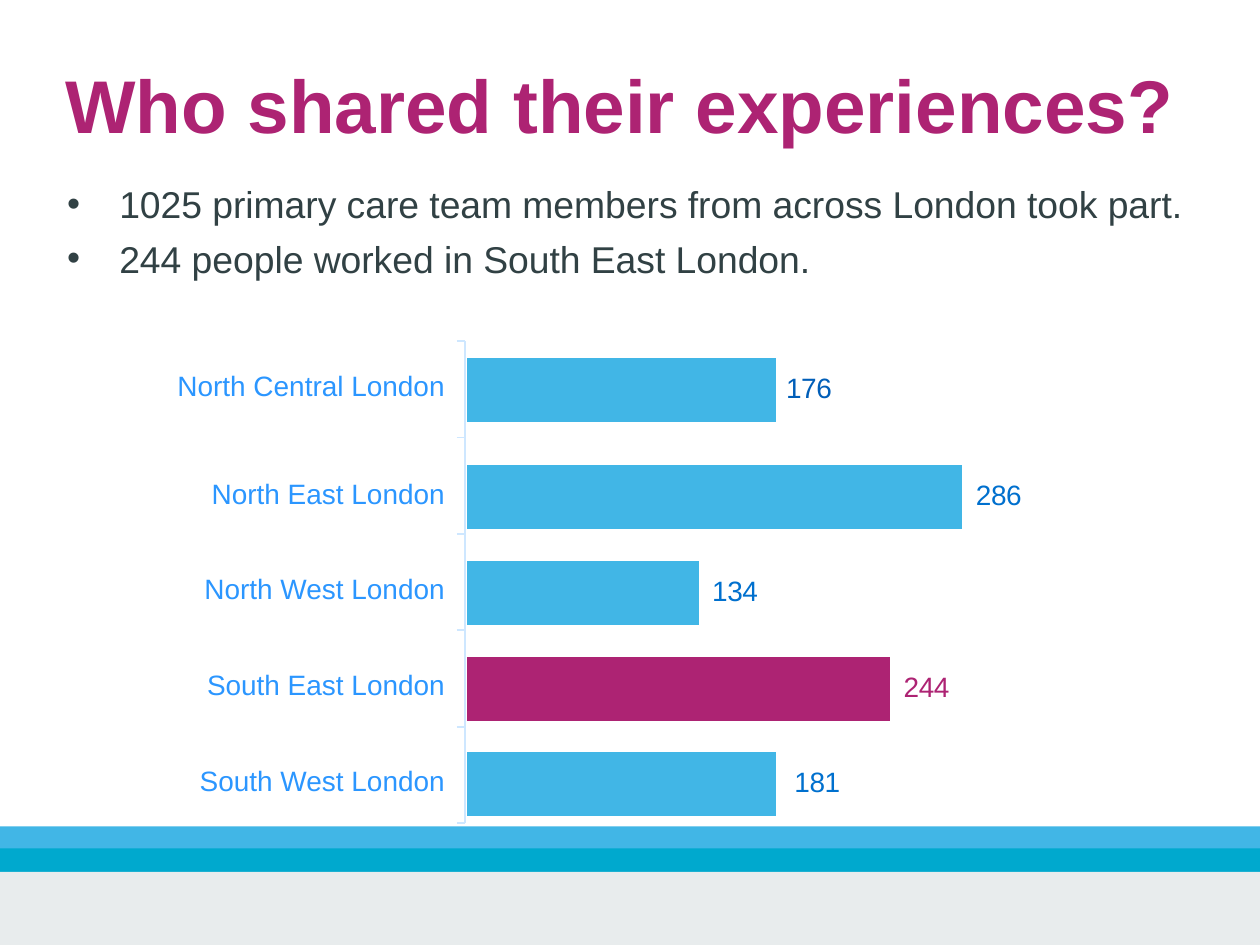
"""Builds the slide on which London areas shared their experiences."""
import dataclasses

import lxml.etree
import pptx
import pptx.dml.color
import pptx.enum.shapes
import pptx.enum.text
import pptx.oxml.ns
import pptx.util

Inches = pptx.util.Inches
Align = pptx.enum.text.PP_ALIGN
qn = pptx.oxml.ns.qn


@dataclasses.dataclass(frozen=True)
class Theme:
    font: str = "Arial"
    title_size: float = 32
    body_size: float = 16
    table_size: float = 12
    spacer_size: float = 6
    axis_width: float = 0.75
    plum: str = "AD2373"
    ink: str = "314144"
    sky: str = "41B6E6"
    teal: str = "00A9CE"
    mist: str = "E8ECED"
    label: str = "2B96FF"
    value: str = "0070CE"
    first_value: str = "005EB8"
    axis: str = "CEE7FF"
    plain_table: str = "{2D5ABB26-0587-4C30-8999-92F81FD0307C}"


class SlideBuilder:
    def __init__(self, slide, theme):
        self.slide = slide
        self.theme = theme

    def color(self, value):
        return pptx.dml.color.RGBColor.from_string(value)

    def style(self, para, size, color, bold=False):
        for run in para.runs:
            run.font.name = self.theme.font
            run.font.size = pptx.util.Pt(size)
            run.font.bold = bold
            run.font.color.rgb = self.color(color)

    def placeholder(self, holder, area, top_inset):
        holder.left, holder.top, holder.width, holder.height = map(Inches, area)
        frame = holder.text_frame
        frame.margin_left = frame.margin_right = frame.margin_bottom = 0
        frame.margin_top = Inches(top_inset)
        frame.vertical_anchor = pptx.enum.text.MSO_ANCHOR.TOP
        frame.auto_size = pptx.enum.text.MSO_AUTO_SIZE.NONE
        frame.word_wrap = True
        return frame

    def title(self, text, area):
        frame = self.placeholder(self.slide.shapes.title, area, 0.02)
        frame.margin_left = Inches(0.01)
        frame.text = text
        para = frame.paragraphs[0]
        para.alignment = Align.LEFT
        self.style(para, self.theme.title_size, self.theme.plum, True)

    def bullets(self, lines, area):
        frame = self.placeholder(self.slide.placeholders[1], area, 0.07)
        frame.text = "\n".join(lines)
        for para in frame.paragraphs:
            para.space_before = pptx.util.Pt(4.1)
            properties = para._p.get_or_add_pPr()
            properties.set("marL", str(Inches(0.33)))
            properties.set("indent", str(Inches(-0.31)))
            self.style(para, self.theme.body_size, self.theme.ink)

    def band(self, top, height, color):
        box = self.slide.shapes.add_shape(
            pptx.enum.shapes.MSO_SHAPE.RECTANGLE,
            0, Inches(top), Inches(7.5), Inches(height))
        box.shadow.inherit = False
        box.fill.solid()
        box.fill.fore_color.rgb = self.color(color)
        box.line.fill.background()

    def line(self, x1, y1, x2, y2):
        connector = self.slide.shapes.add_connector(
            pptx.enum.shapes.MSO_CONNECTOR.STRAIGHT,
            Inches(x1), Inches(y1), Inches(x2), Inches(y2))
        connector.line.color.rgb = self.color(self.theme.axis)
        connector.line.width = pptx.util.Pt(self.theme.axis_width)
        lxml.etree.SubElement(connector._element.spPr, qn("a:effectLst"))

    def axis(self, x, top, bottom, intervals):
        self.line(x, top, x, bottom)
        for index in range(intervals + 1):
            y = top + (bottom - top) * index / intervals
            self.line(x - 0.05, y, x, y)

    def cell_text(self, cell, text, color, top):
        cell.text = text
        cell.margin_top = Inches(top)
        para = cell.text_frame.paragraphs[0]
        self.style(para, self.theme.table_size, color)
        return para

    def bar_table(self, areas, left, top, columns, rows):
        frame = self.slide.shapes.add_table(
            len(rows), len(columns), Inches(left), Inches(top),
            Inches(sum(columns)), Inches(sum(rows)))
        table = frame.table
        table.first_row = table.horz_banding = False
        table._tbl.tblPr.find(qn("a:tableStyleId")).text = self.theme.plain_table
        for column, width in zip(table.columns, columns):
            column.width = Inches(width)
        for row, height in zip(table.rows, rows):
            row.height = Inches(height)
        for cell in table.iter_cells():
            cell.margin_left = cell.margin_right = 0
            cell.margin_top = cell.margin_bottom = 0
            cell.fill.background()
            ending = lxml.etree.SubElement(
                cell.text_frame.paragraphs[0]._p, qn("a:endParaRPr"))
            ending.set("sz", str(self.theme.spacer_size * 100))
        for index, (name, value, filled, indent, bar, ink) in enumerate(areas):
            row = index * 2
            label = table.cell(row, 0)
            label.margin_right = Inches(0.13)
            para = self.cell_text(label, name, self.theme.label, 0.08)
            para.alignment = Align.RIGHT
            for column in range(1, filled + 1):
                cell = table.cell(row, column)
                cell.fill.solid()
                cell.fill.fore_color.rgb = self.color(bar)
            number = table.cell(row, filled + 1)
            number.margin_left = Inches(indent)
            para = self.cell_text(number, str(value), ink, 0.09)
            para.runs[0].font._element.set("spc", "-20")
        table.cell(0, 4).merge(table.cell(1, 5))


def main():
    theme = Theme()
    deck = pptx.Presentation()
    deck.slide_width = Inches(7.5)
    deck.slide_height = deck.slide_width * 3 // 4
    builder = SlideBuilder(deck.slides.add_slide(deck.slide_layouts[1]), theme)
    builder.title("Who shared their experiences?", (0.38, 0.33, 6.62, 0.56))
    builder.bullets(
        ["1025 primary care team members from across London took part.",
         "244 people worked in South East London."],
        (0.38, 1.01, 6.69, 0.68))
    areas = [
        ("North Central London", 176, 2, 0.06, theme.sky, theme.first_value),
        ("North East London", 286, 4, 0.08, theme.sky, theme.value),
        ("North West London", 134, 1, 0.08, theme.sky, theme.value),
        ("South East London", 244, 3, 0.08, theme.plum, theme.plum),
        ("South West London", 181, 2, 0.11, theme.sky, theme.value),
    ]
    builder.bar_table(
        areas, 1.01, 2.13, [1.77, 1.38, 0.46, 0.68, 0.43, 0.4],
        [0.38, 0.26] + [0.38, 0.19] * 3 + [0.38])
    builder.axis(2.77, 2.03, 4.9, len(areas))
    builder.band(4.92, 0.14, theme.sky)
    builder.band(5.05, 0.14, theme.teal)
    builder.band(5.19, 0.44, theme.mist)
    deck.save("out.pptx")


if __name__ == "__main__":
    main()
